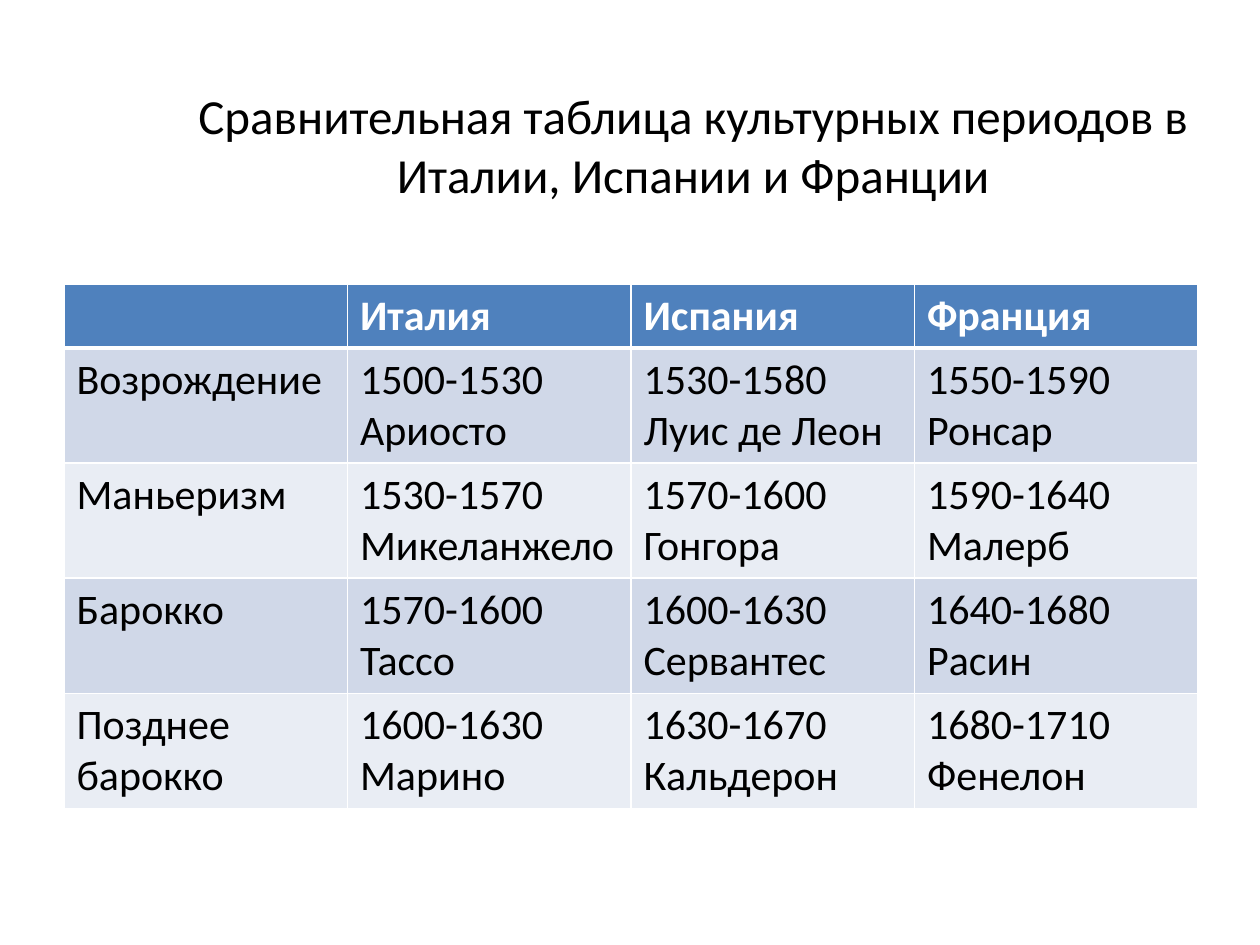
from dataclasses import dataclass

from lxml.etree import SubElement
from pptx import Presentation
from pptx.dml.color import RGBColor
from pptx.enum.text import MSO_ANCHOR, MSO_AUTO_SIZE, PP_ALIGN
from pptx.oxml.ns import qn
from pptx.util import Emu, Pt

PX = 914400 / 126


@dataclass(frozen=True)
class Theme:
    """Colours, font and type sizes of the slide."""
    font: str = "Calibri"
    title_size: int = 28
    cell_size: int = 24
    ink: str = "000000"
    paper: str = "FFFFFF"
    header: str = "4F81BD"
    bands: tuple = ("D0D8E8", "E9EDF4")
    rule: int = 1
    header_rule: int = 3


@dataclass(frozen=True)
class Box:
    """A region of the slide in px."""
    left: int
    top: int
    width: int
    height: int

    def emu(self):
        """Return the region as four EMU lengths."""
        return [px(n) for n in (self.left, self.top, self.width, self.height)]


THEME = Theme()
TITLE = "Сравнительная таблица культурных периодов в Италии, Испании и Франции"
COUNTRIES = ["", "Италия", "Испания", "Франция"]
PERIODS = [
    ["Возрождение", "1500-1530\nАриосто", "1530-1580\nЛуис де Леон", "1550-1590\nРонсар"],
    ["Маньеризм", "1530-1570\nМикеланжело", "1570-1600\nГонгора", "1590-1640\nМалерб"],
    ["Барокко", "1570-1600\nТассо", "1600-1630\nСервантес", "1640-1680\nРасин"],
    ["Позднее барокко", "1600-1630\nМарино", "1630-1670\nКальдерон", "1680-1710\nФенелон"],
]


def px(length):
    """Turn px into EMU."""
    return Emu(round(length * PX))


def apply(target, values):
    """Set each attribute in values on target."""
    for name, value in values.items():
        setattr(target, name, value)


def style_text(frame, size, colour, bold=False):
    """Format the font of every paragraph in a text frame."""
    for paragraph in frame.paragraphs:
        apply(paragraph.font, {"name": THEME.font, "size": Pt(size), "bold": bold})
        paragraph.font.color.rgb = RGBColor.from_string(colour)
        for run in paragraph.runs:
            apply(run.font, {"name": THEME.font, "size": Pt(size), "bold": bold})
            run.font.color.rgb = RGBColor.from_string(colour)


def add_borders(cell, widths):
    """Draw the cell borders, given as side and point width."""
    properties = cell._tc.get_or_add_tcPr()
    for side, width in widths.items():
        line = SubElement(properties, qn(f"a:ln{side}"), w=str(Pt(width)))
        fill = SubElement(line, qn("a:solidFill"))
        SubElement(fill, qn("a:srgbClr"), val=THEME.paper)


def fill_cell(cell, words, fill, colour, bold, widths):
    """Write and format one table cell."""
    cell.text = words
    style_text(cell.text_frame, THEME.cell_size, colour, bold)
    add_borders(cell, widths)
    cell.fill.solid()
    cell.fill.fore_color.rgb = RGBColor.from_string(fill)


def place_title(slide, box):
    """Put the heading in the title placeholder."""
    title = slide.shapes.title
    apply(title, dict(zip(("left", "top", "width", "height"), box.emu())))
    frame = title.text_frame
    frame.text = TITLE
    apply(frame, {"word_wrap": True, "auto_size": MSO_AUTO_SIZE.NONE,
                  "vertical_anchor": MSO_ANCHOR.MIDDLE})
    frame.paragraphs[0].alignment = PP_ALIGN.CENTER
    style_text(frame, THEME.title_size, THEME.ink)


def place_periods(slide, box, header_height):
    """Build the table of periods by country."""
    rows = [COUNTRIES, *PERIODS]
    table = slide.shapes.add_table(len(rows), len(COUNTRIES), *box.emu()).table
    for column in table.columns:
        column.width = px(box.width / len(COUNTRIES))
    period_height = (box.height - header_height) / len(PERIODS)
    for r, row in enumerate(rows):
        is_header = r == 0
        table.rows[r].height = px(header_height if is_header else period_height)
        fill = THEME.header if is_header else THEME.bands[(r - 1) % 2]
        colour = THEME.paper if is_header else THEME.ink
        widths = dict.fromkeys("LRTB", THEME.rule)
        if is_header:
            widths["B"] = THEME.header_rule
        elif r == 1:
            widths["T"] = THEME.header_rule
        for c, words in enumerate(row):
            fill_cell(table.cell(r, c), words, fill, colour, is_header, widths)


def main():
    """Build and save the slide."""
    deck = Presentation()
    apply(deck, {"slide_width": px(1260), "slide_height": px(945)})
    slide = deck.slides.add_slide(deck.slide_layouts[5])
    place_title(slide, Box(126, 66, 1134, 157))
    place_periods(slide, Box(64, 284, 1134, 523), header_height=63)
    deck.save("out.pptx")


if __name__ == "__main__":
    main()
